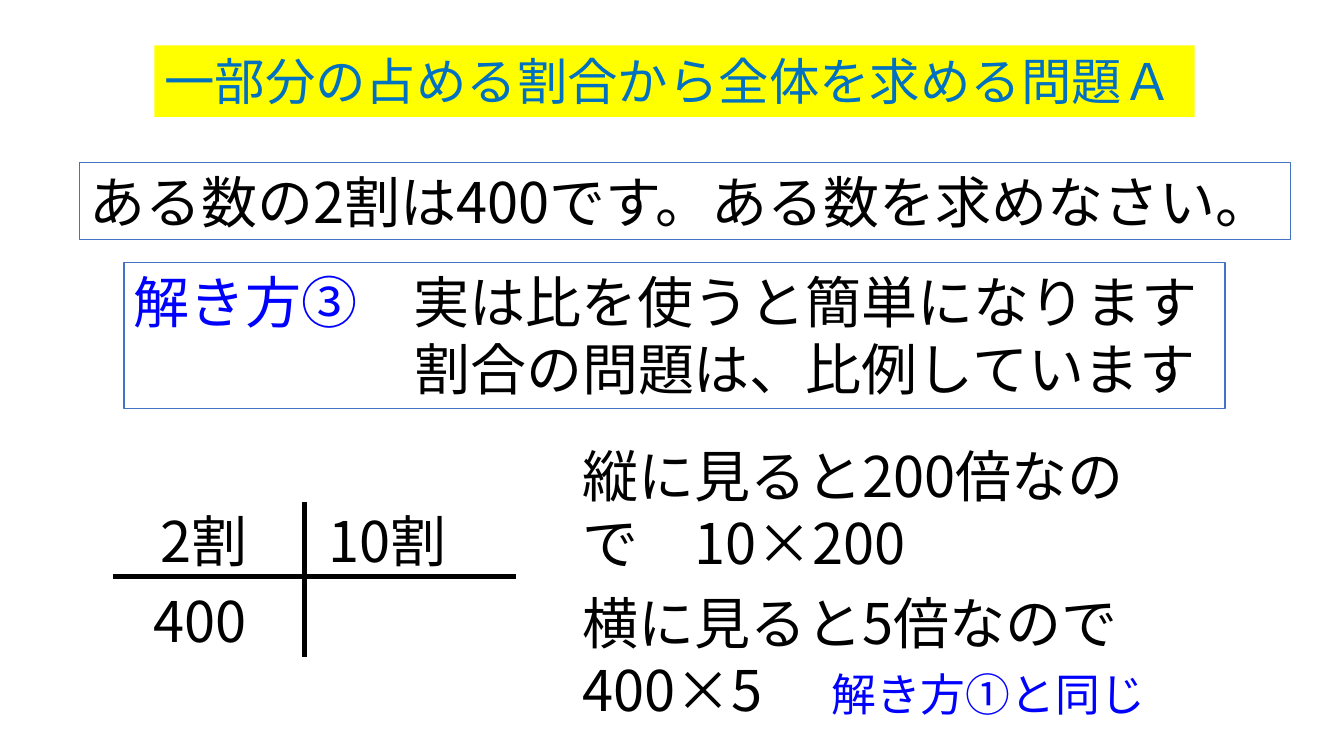
"""Build the slide on finding a whole from a part with ratios."""
import pptx
import pptx.dml.color
import pptx.enum.lang
import pptx.enum.shapes
import pptx.enum.text
import pptx.oxml
import pptx.oxml.ns
import pptx.util
from pptx.util import Inches

RGBColor = pptx.dml.color.RGBColor
BLACK = RGBColor(0x00, 0x00, 0x00)
BLUE = RGBColor(0x00, 0x00, 0xFF)
TITLE_BLUE = RGBColor(0x00, 0x70, 0xC0)
BORDER_BLUE = RGBColor(0x44, 0x72, 0xC4)
YELLOW = RGBColor(0xFF, 0xFF, 0x00)
FONT = "Noto Sans CJK JP"


def add_run(p, text, size=40, color=BLACK):
    """Append a formatted Japanese run to a paragraph."""
    r = p.add_run()
    r.text = text
    r.font.name = FONT
    r.font.size = pptx.util.Pt(size)
    r.font.color.rgb = color
    r.font.language_id = pptx.enum.lang.MSO_LANGUAGE_ID.JAPANESE
    ea = pptx.oxml.parse_xml(
        f'<a:ea {pptx.oxml.ns.nsdecls("a")} typeface="{FONT}"/>')
    r.font._element.find(pptx.oxml.ns.qn("a:latin")).addnext(ea)


def prepare_frame(s):
    """Make a shape's text wrap from the top left and return its frame."""
    tf = s.text_frame
    tf.word_wrap = True
    tf.auto_size = pptx.enum.text.MSO_AUTO_SIZE.SHAPE_TO_FIT_TEXT
    tf.vertical_anchor = pptx.enum.text.MSO_ANCHOR.TOP
    tf.paragraphs[0].alignment = pptx.enum.text.PP_ALIGN.LEFT
    return tf


def add_text(slide, x, y, w, h, text):
    """Add a plain text box and return its paragraph."""
    s = slide.shapes.add_textbox(Inches(x), Inches(y), Inches(w), Inches(h))
    p = prepare_frame(s).paragraphs[0]
    add_run(p, text)
    return p


def add_box(slide, x, y, w, h, fill=None, line=None):
    """Add a rectangle and return its text frame."""
    s = slide.shapes.add_shape(pptx.enum.shapes.MSO_SHAPE.RECTANGLE,
                               Inches(x), Inches(y), Inches(w), Inches(h))
    s.shadow.inherit = False
    if fill is None:
        s.fill.background()
    else:
        s.fill.solid()
        s.fill.fore_color.rgb = fill
    if line is None:
        s.line.fill.background()
    else:
        s.line.color.rgb = line
        s.line.width = pptx.util.Pt(0.75)
    return prepare_frame(s)


def add_line(slide, x1, y1, x2, y2):
    """Add a thick black rule."""
    s = slide.shapes.add_connector(pptx.enum.shapes.MSO_CONNECTOR.STRAIGHT,
                                   Inches(x1), Inches(y1), Inches(x2), Inches(y2))
    s.line.color.rgb = BLACK
    s.line.width = pptx.util.Pt(3)
    s._element.spPr.append(pptx.oxml.parse_xml(
        f'<a:effectLst {pptx.oxml.ns.nsdecls("a")}/>'))


def main():
    """Compose and save the slide."""
    prs = pptx.Presentation()
    prs.slide_width, prs.slide_height = Inches(13.33), Inches(7.5)
    slide = prs.slides.add_slide(prs.slide_layouts[6])

    add_line(slide, 1.12, 5.72, 5.12, 5.72)
    add_line(slide, 3.02, 4.98, 3.02, 6.52)
    for x, y, w, text in [(1.49, 4.98, 1.32, "2割"),
                          (3.16, 4.98, 1.61, "10割"),
                          (1.42, 5.77, 1.45, "400")]:
        add_text(slide, x, y, w, 0.77, text)

    add_text(slide, 5.68, 4.33, 6.59, 1.45, "縦に見ると200倍なので　10×200")
    p = add_text(slide, 5.68, 5.79, 6.59, 1.45, "横に見ると5倍なので　400×5 　")
    add_run(p, "解き方①と同じ", size=32, color=BLUE)

    tf = add_box(slide, 0.79, 1.61, 12.01, 0.77, line=BORDER_BLUE)
    add_run(tf.paragraphs[0], "ある数の2割は400です。ある数を求めなさい。")

    tf = add_box(slide, 1.23, 2.6, 10.92, 1.45, line=BORDER_BLUE)
    add_run(tf.paragraphs[0], "解き方③　", color=BLUE)
    add_run(tf.paragraphs[0], "実は比を使うと簡単になります")
    p = tf.add_paragraph()
    p.alignment = pptx.enum.text.PP_ALIGN.LEFT
    p._p.get_or_add_pPr().set("marL", str(Inches(2.78)))
    add_run(p, "割合の問題は、比例しています")

    tf = add_box(slide, 1.53, 0.45, 10.32, 0.71, fill=YELLOW)
    add_run(tf.paragraphs[0], "一部分の占める割合から全体を求める問題Ａ", size=36, color=TITLE_BLUE)

    prs.save("out.pptx")


if __name__ == "__main__":
    main()
